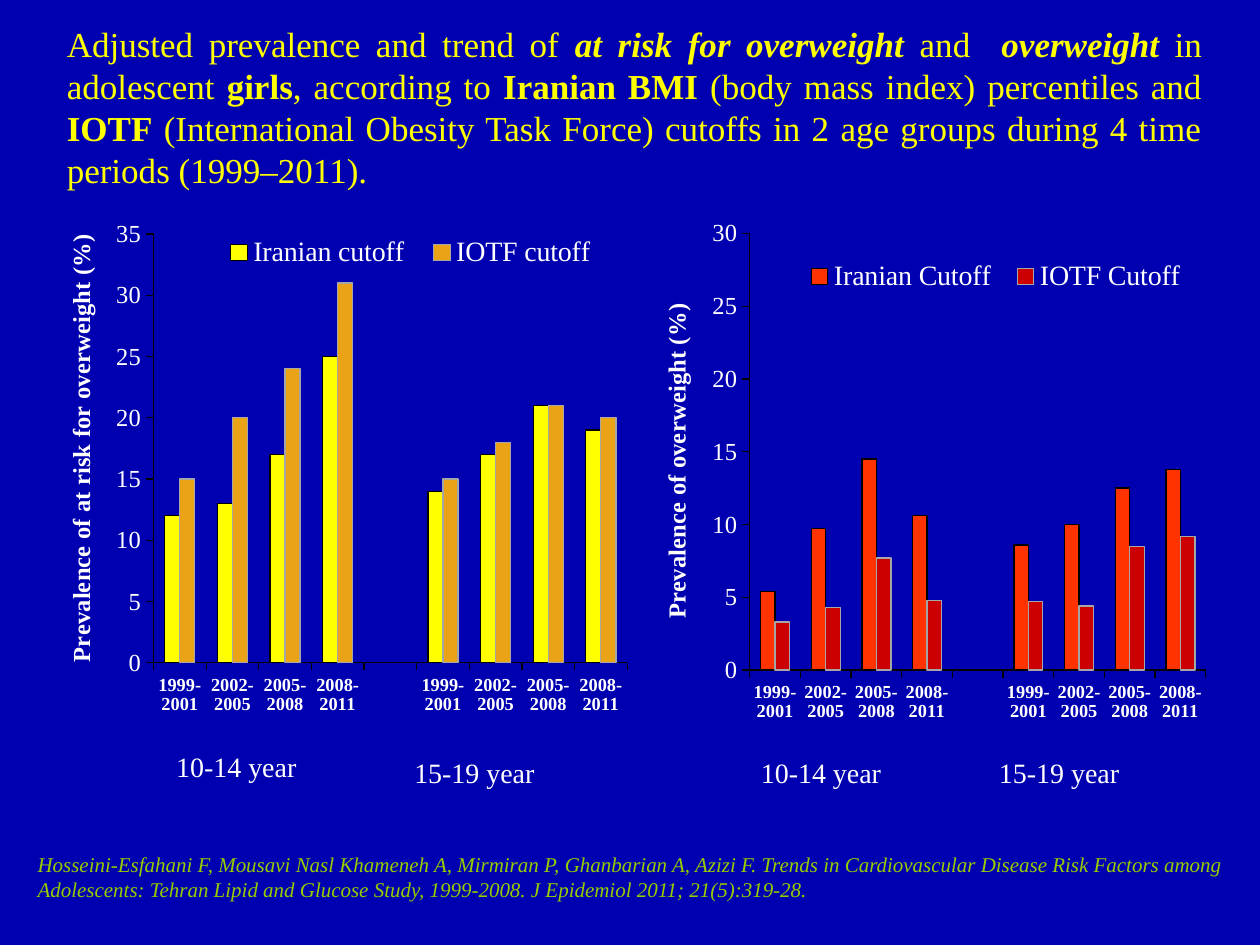
from lxml import etree
from pptx import Presentation
from pptx.chart.data import CategoryChartData
from pptx.dml.color import RGBColor
from pptx.enum.chart import XL_CHART_TYPE, XL_LEGEND_POSITION, XL_TICK_MARK
from pptx.enum.text import MSO_ANCHOR, MSO_AUTO_SIZE, PP_ALIGN
from pptx.oxml import parse_xml
from pptx.oxml.ns import nsdecls, qn
from pptx.util import Inches, Pt

CLUSTERED = XL_CHART_TYPE.COLUMN_CLUSTERED
LEGEND_RIGHT, LEGEND_BOTTOM = XL_LEGEND_POSITION.RIGHT, XL_LEGEND_POSITION.BOTTOM
OUTSIDE = XL_TICK_MARK.OUTSIDE
JUSTIFY = PP_ALIGN.JUSTIFY
TOP = MSO_ANCHOR.TOP
NO_AUTOFIT = MSO_AUTO_SIZE.NONE

FACE = "Times New Roman"
COLORS = {
    "background": "0000B0", "title": "FFFF00", "text": "FFFFFF",
    "citation": "99CC00", "axis": "000000", "pale_edge": "A6A6A6",
    "risk_iranian": "FFFF00", "risk_iotf": "EAA316",
    "over_iranian": "FF3300", "over_iotf": "CC0000",
}
PERIODS = ["1999-2001", "2002-2005", "2005-2008", "2008-2011"]
HEADLINE = [
    ("Adjusted prevalence and trend of ", False, False),
    ("at risk for overweight", True, True),
    (" and  ", False, False),
    ("overweight", True, True),
    (" in adolescent ", False, False),
    ("girls", True, False),
    (", according to ", False, False),
    ("Iranian BMI", True, False),
    (" (body mass index) percentiles and ", False, False),
    ("IOTF", True, False),
    (" (International Obesity Task Force) cutoffs in 2 age groups "
     "during 4 time periods (1999–2011).", False, False),
]
CITATION = (
    "Hosseini-Esfahani F, Mousavi Nasl Khameneh A, Mirmiran P, Ghanbarian A, "
    "Azizi F. Trends in Cardiovascular Disease Risk Factors among Adolescents: "
    "Tehran Lipid and Glucose Study, 1999-2008. J Epidemiol 2011; 21(5):319-28."
)
RISK = {
    "axis_title": "Prevalence of at risk for overweight (%)", "maximum": 35,
    "series": [
        ("Iranian cutoff", [12, 13, 17, 25, None, 14, 17, 21, 19],
         "risk_iranian", "axis"),
        ("IOTF cutoff", [15, 20, 24, 31, None, 15, 18, 21, 20],
         "risk_iotf", "pale_edge"),
    ],
    "legend": LEGEND_RIGHT, "legend_box": (0.25, 0.09, 0.64, 0.04),
    "plot_box": (0.16, 0.09, 0.76, 0.63), "title_at": (0.01, 0.08),
}
RISK["plot_box"] = (0.159, 0.086, 0.758, 0.627)
OVERWEIGHT = {
    "axis_title": "Prevalence of overweight (%)", "maximum": 30,
    "series": [
        ("Iranian Cutoff", [5.4, 9.7, 14.5, 10.6, None, 8.6, 10, 12.5, 13.8],
         "over_iranian", "axis"),
        ("IOTF Cutoff", [3.3, 4.3, 7.7, 4.8, None, 4.7, 4.4, 8.5, 9.2],
         "over_iotf", "pale_edge"),
    ],
    "legend": LEGEND_BOTTOM, "legend_box": (0.25, 0.08, 0.7, 0.06),
    "plot_box": (0.173, 0.034, 0.792, 0.772), "title_at": (0.01, 0.15),
}


def color(name):
    """Look up a palette colour."""
    return RGBColor.from_string(COLORS[name])


def style(font, size, name="text", bold=False, italic=False):
    """Set the face, size, colour and weight of a font."""
    font.name, font.size = FACE, Pt(size)
    font.bold, font.italic = bold, italic
    font.color.rgb = color(name)


def place(shape, box):
    """Move a shape to a box of left, top, width and height in inches."""
    shape.left, shape.top, shape.width, shape.height = map(Inches, box)


def set_layout(parent, index, box, inner=False):
    """Give a chart part a manual layout in fractions of the chart."""
    for old in parent.findall(qn("c:layout")):
        parent.remove(old)
    layout = etree.Element(qn("c:layout"))
    manual = etree.SubElement(layout, qn("c:manualLayout"))
    settings = [("layoutTarget", "inner")] if inner else []
    settings += [("xMode", "edge"), ("yMode", "edge")]
    settings += zip("xywh", box)
    for tag, value in settings:
        etree.SubElement(manual, qn("c:" + tag)).set("val", str(value))
    parent.insert(index, layout)


def add_headline(slide, box):
    """Place and fill the slide title."""
    title = slide.shapes.title
    place(title, box)
    frame = title.text_frame
    frame.word_wrap, frame.auto_size = True, NO_AUTOFIT
    frame.vertical_anchor = TOP
    paragraph = frame.paragraphs[0]
    paragraph.alignment = JUSTIFY
    paragraph.line_spacing = 1.0
    paragraph.space_before = Pt(0)
    for words, bold, italic in HEADLINE:
        run = paragraph.add_run()
        run.text = words
        style(run.font, 20, "title", bold, italic)


def add_text(slide, box, words, size, name="text", italic=False, align=None):
    """Add a one-paragraph text box."""
    text = slide.shapes.add_textbox(*map(Inches, box))
    text.text_frame.word_wrap = True
    paragraph = text.text_frame.paragraphs[0]
    paragraph.text = words
    paragraph.alignment = align
    style(paragraph.font, size, name, italic=italic)


def style_axis(axis, size, bold):
    """Format an axis line, its ticks and its labels."""
    axis.has_major_gridlines = False
    axis.major_tick_mark = OUTSIDE
    axis.format.line.color.rgb = color("axis")
    axis.format.line.width = Pt(0.75)
    style(axis.tick_labels.font, size, bold=bold)


def add_prevalence_chart(slide, box, content):
    """Add one clustered column chart of prevalence by period and cutoff."""
    data = CategoryChartData()
    data.categories = PERIODS + [""] + PERIODS
    for name, values, _, _ in content["series"]:
        data.add_series(name, values)
    chart = slide.shapes.add_chart(CLUSTERED, *map(Inches, box), data).chart
    chart.has_title = False
    chart.font.name, chart.font.size = "Calibri", Pt(10)

    plot = chart.plots[0]
    plot.vary_by_categories = False
    plot.gap_width = 150
    for series, (_, _, fill, edge) in zip(plot.series, content["series"]):
        series.format.fill.solid()
        series.format.fill.fore_color.rgb = color(fill)
        series.format.line.color.rgb = color(edge)
        series.format.line.width = Pt(0.75)

    style_axis(chart.category_axis, 10.5, True)
    value_axis = chart.value_axis
    style_axis(value_axis, 14, False)
    value_axis.minimum_scale, value_axis.maximum_scale = 0, content["maximum"]
    value_axis.major_unit = 5
    value_axis.tick_labels.number_format = "0"
    value_axis.tick_labels.number_format_is_linked = False
    frame = value_axis.axis_title.text_frame
    frame.text = content["axis_title"]
    style(frame.paragraphs[0].runs[0].font, 14, bold=True)
    body = frame._txBody.find(qn("a:bodyPr"))
    body.set("rot", "-5400000")
    body.set("vert", "horz")
    set_layout(value_axis.axis_title._element, 1, content["title_at"])

    chart.has_legend = True
    chart.legend.position = content["legend"]
    chart.legend.include_in_layout = False
    style(chart.legend.font, 16)
    set_layout(chart.legend._element, 1, content["legend_box"])
    chart_part = chart._chartSpace.find(qn("c:chart"))
    set_layout(chart_part.find(qn("c:plotArea")), 0, content["plot_box"], True)
    chart_part.addnext(parse_xml(
        f'<c:spPr {nsdecls("c", "a")}><a:noFill/><a:ln><a:noFill/></a:ln></c:spPr>'))


def main():
    """Build and save the slide."""
    deck = Presentation()
    deck.slide_width, deck.slide_height = Inches(10), Inches(7.5)
    slide = deck.slides.add_slide(deck.slide_layouts[5])
    slide.background.fill.solid()
    slide.background.fill.fore_color.rgb = color("background")
    add_headline(slide, (0.43, 0.13, 9.21, 1.45))
    add_prevalence_chart(slide, (0.43, 1.39, 4.96, 5.43), RISK)
    add_prevalence_chart(slide, (5.16, 1.7, 4.57, 4.49), OVERWEIGHT)
    for left, top, width, ages in [
        (1.3, 5.9, 1.18, "10-14"), (3.19, 5.95, 1.34, "15-19"),
        (5.94, 5.95, 1.18, "10-14"), (7.83, 5.95, 1.18, "15-19"),
    ]:
        add_text(slide, (left, top, width, 0.37), f"{ages} year", 16)
    add_text(slide, (0.2, 6.71, 9.61, 0.5), CITATION, 12, "citation", True, JUSTIFY)
    deck.save("out.pptx")


if __name__ == "__main__":
    main()
